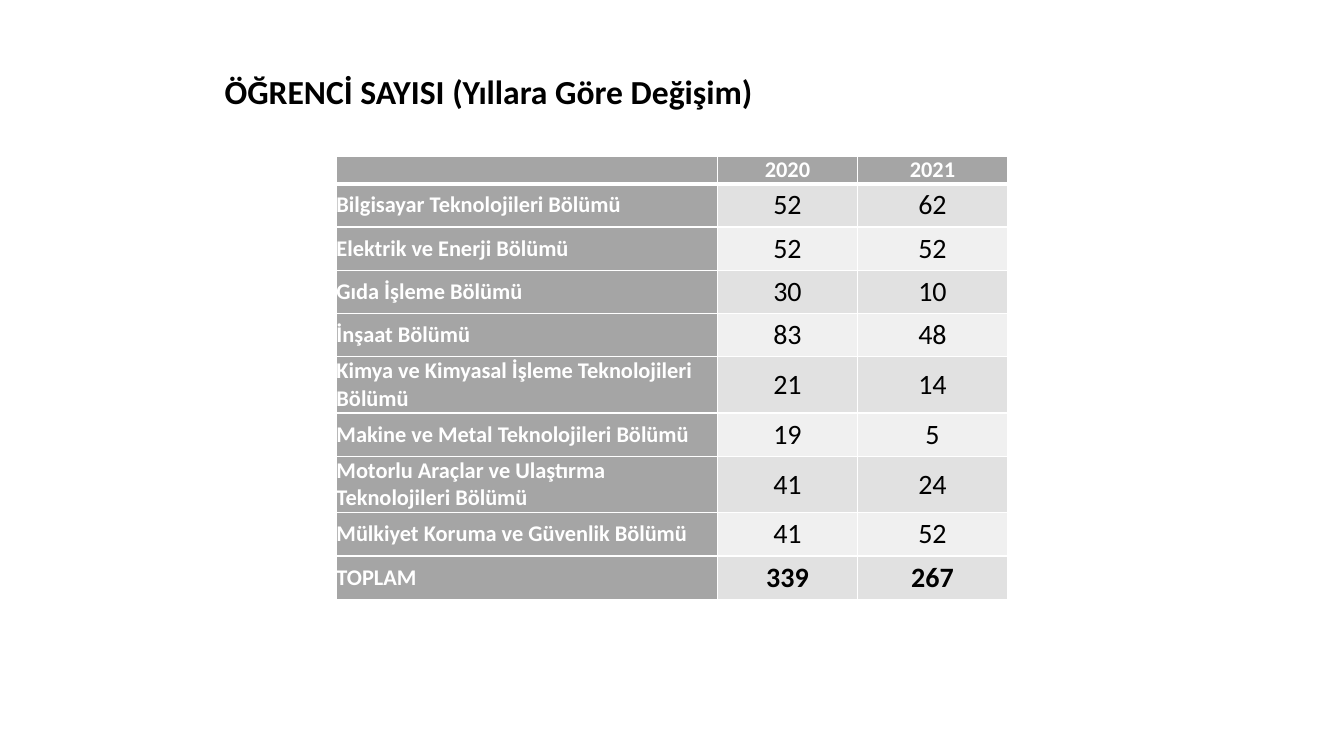
"""Build the slide with student numbers per department and year."""
from lxml import etree
from pptx import Presentation
from pptx.dml.color import RGBColor
from pptx.enum.text import MSO_ANCHOR, MSO_AUTO_SIZE, PP_ALIGN
from pptx.oxml.ns import qn
from pptx.util import Cm, Pt

LEFT, CENTER = PP_ALIGN.LEFT, PP_ALIGN.CENTER
MIDDLE = MSO_ANCHOR.MIDDLE
GROW = MSO_AUTO_SIZE.SHAPE_TO_FIT_TEXT
WHITE, BLACK, GREY = "FFFFFF", "000000", "A5A5A5"
BANDS = ["E1E1E1", "F0F0F0"]


def write(para, text, size, color, bold, align=LEFT):
    para.alignment = align
    span = para.add_run()
    span.text = text
    formats = {"name": "Calibri", "size": Pt(size), "bold": bold}
    for name, value in formats.items():
        setattr(span.font, name, value)
    span.font.color.rgb = RGBColor.from_string(color)


def add_border(cell, side, points):
    line = etree.SubElement(cell._tc.get_or_add_tcPr(), qn(f"a:{side}"), w=str(Pt(points)))
    fill = etree.SubElement(line, qn("a:solidFill"))
    etree.SubElement(fill, qn("a:srgbClr"), val=WHITE)


deck = Presentation()
deck.slide_width, deck.slide_height = Cm(33.87), Cm(19.05)
page = deck.slides.add_slide(deck.slide_layouts[6])

title = page.shapes.add_textbox(Cm(5.41), Cm(1.65), Cm(13.94), Cm(1.27)).text_frame
title.word_wrap = False
title.auto_size = GROW
write(title.paragraphs[0], "ÖĞRENCİ SAYISI (Yıllara Göre Değişim)", 24, BLACK, True)

student_rows = [
    ("", "2020", "2021"),
    ("Bilgisayar Teknolojileri Bölümü", "52", "62"),
    ("Elektrik ve Enerji Bölümü", "52", "52"),
    ("Gıda İşleme Bölümü", "30", "10"),
    ("İnşaat Bölümü", "83", "48"),
    ("Kimya ve Kimyasal İşleme Teknolojileri Bölümü", "21", "14"),
    ("Makine ve Metal Teknolojileri Bölümü", "19", "5"),
    ("Motorlu Araçlar ve Ulaştırma Teknolojileri Bölümü", "41", "24"),
    ("Mülkiyet Koruma ve Güvenlik Bölümü", "41", "52"),
    ("TOPLAM", "339", "267"),
]
column_widths = [9.6, 3.53, 3.78]
row_heights = [0.69] + [1.09] * 4 + [1.42, 1.09] * 2 + [1.09]
last_row = len(student_rows) - 1

table = page.shapes.add_table(
    len(student_rows), len(column_widths), Cm(8.48), Cm(3.94),
    Cm(sum(column_widths)), Cm(sum(row_heights))).table
for column, width in zip(table.columns, column_widths):
    column.width = Cm(width)

for row_index, values in enumerate(student_rows):
    table.rows[row_index].height = Cm(row_heights[row_index])
    for column_index, text in enumerate(values):
        cell = table.cell(row_index, column_index)
        heading = row_index == 0 or column_index == 0
        cell.vertical_anchor = MIDDLE
        for side in ("left", "right", "top", "bottom"):
            setattr(cell, f"margin_{side}", 0)
        add_border(cell, "lnL", 1)
        add_border(cell, "lnR", 1)
        add_border(cell, "lnT", 3 if row_index == 1 else 1)
        add_border(cell, "lnB", 3 if row_index == 0 else 1)
        cell.fill.solid()
        cell.fill.fore_color.rgb = RGBColor.from_string(
            GREY if heading else BANDS[(row_index - 1) % 2])
        para = cell.text_frame.paragraphs[0]
        if text:
            write(para, text, 16 if heading else 20, WHITE if heading else BLACK,
                  heading or row_index == last_row, CENTER if column_index else LEFT)
        else:
            etree.SubElement(para._p, qn("a:endParaRPr"), sz="1600")

deck.save("out.pptx")
